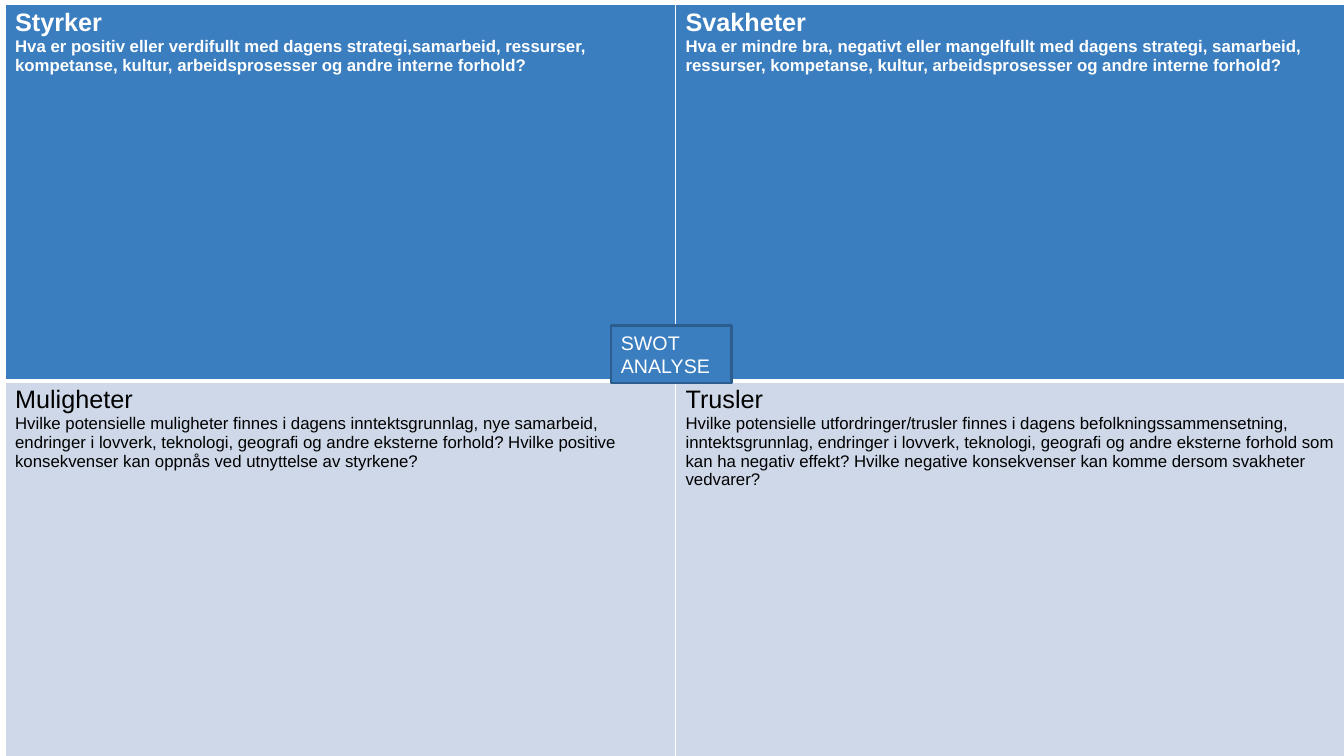
from lxml import etree
from pptx import Presentation
from pptx.dml.color import RGBColor
from pptx.enum.shapes import MSO_SHAPE
from pptx.enum.text import MSO_ANCHOR, PP_ALIGN
from pptx.oxml.ns import qn
from pptx.util import Inches, Pt

BLUE, PALE, WHITE, BLACK = "3A7EC0", "CED8E8", "FFFFFF", "000000"


def color(code):
    return RGBColor.from_string(code)


def border(cell, side, width):
    props = cell._tc.get_or_add_tcPr()
    line = etree.SubElement(props, qn(f"a:ln{side}"), w=str(Pt(width)))
    fill = etree.SubElement(line, qn("a:solidFill"))
    etree.SubElement(fill, qn("a:srgbClr"), val=WHITE)


deck = Presentation()
deck.slide_width, deck.slide_height = Inches(13.33), Inches(7.5)
slide = deck.slides.add_slide(deck.slide_layouts[6])

# Four fields: heading and guiding question
fields = [
    [("Styrker",
      "Hva er positiv eller verdifullt med dagens strategi,samarbeid, ressurser, "
      "kompetanse, kultur, arbeidsprosesser og andre interne forhold?"),
     ("Svakheter",
      "Hva er mindre bra, negativt eller mangelfullt med dagens strategi, samarbeid, "
      "ressurser, kompetanse, kultur, arbeidsprosesser og andre interne forhold?")],
    [("Muligheter",
      "Hvilke potensielle muligheter finnes i dagens inntektsgrunnlag, nye samarbeid, "
      "endringer i lovverk, teknologi, geografi og andre eksterne forhold? Hvilke "
      "positive konsekvenser kan oppnås ved utnyttelse av styrkene?"),
     ("Trusler",
      "Hvilke potensielle utfordringer/trusler finnes i dagens befolkningssammensetning, "
      "inntektsgrunnlag, endringer i lovverk, teknologi, geografi og andre eksterne "
      "forhold som kan ha negativ effekt? Hvilke negative konsekvenser kan komme "
      "dersom svakheter vedvarer?")],
]
# Fill, text colour, bold, top and bottom border of each row
looks = [(BLUE, WHITE, True, 1, 3), (PALE, BLACK, False, 3, 1)]

# SWOT table
grid = slide.shapes.add_table(2, 2, Inches(0.05), Inches(0.04),
                              Inches(13.3), Inches(7.48)).table
for r, (back, ink, bold, top, base) in enumerate(looks):
    for c, texts in enumerate(fields[r]):
        cell = grid.cell(r, c)
        for side, width in zip("LRTB", (1, 1, top, base)):
            border(cell, side, width)
        cell.fill.solid()
        cell.fill.fore_color.rgb = color(back)
        cell.text_frame.text = "\n".join(texts)
        for para, size in zip(cell.text_frame.paragraphs, (18, 12)):
            font = para.runs[0].font
            font.name, font.size, font.bold = "Arial", Pt(size), bold
            font.color.rgb = color(ink)

# Label in the middle
label = slide.shapes.add_shape(MSO_SHAPE.RECTANGLE, Inches(6.06), Inches(3.23),
                               Inches(1.2), Inches(0.57))
label.shadow.inherit = False
label.fill.solid()
label.fill.fore_color.rgb = color(BLUE)
label.line.color.rgb = color("2B5D8E")
label.line.width = Pt(2)
frame = label.text_frame
frame.word_wrap = True
frame.vertical_anchor = MSO_ANCHOR.TOP
frame.text = "SWOT\nANALYSE"
for para in frame.paragraphs:
    para.alignment = PP_ALIGN.LEFT
    font = para.runs[0].font
    font.name, font.size = "Arial", Pt(14)
    font.color.rgb = color(WHITE)

deck.save("out.pptx")
